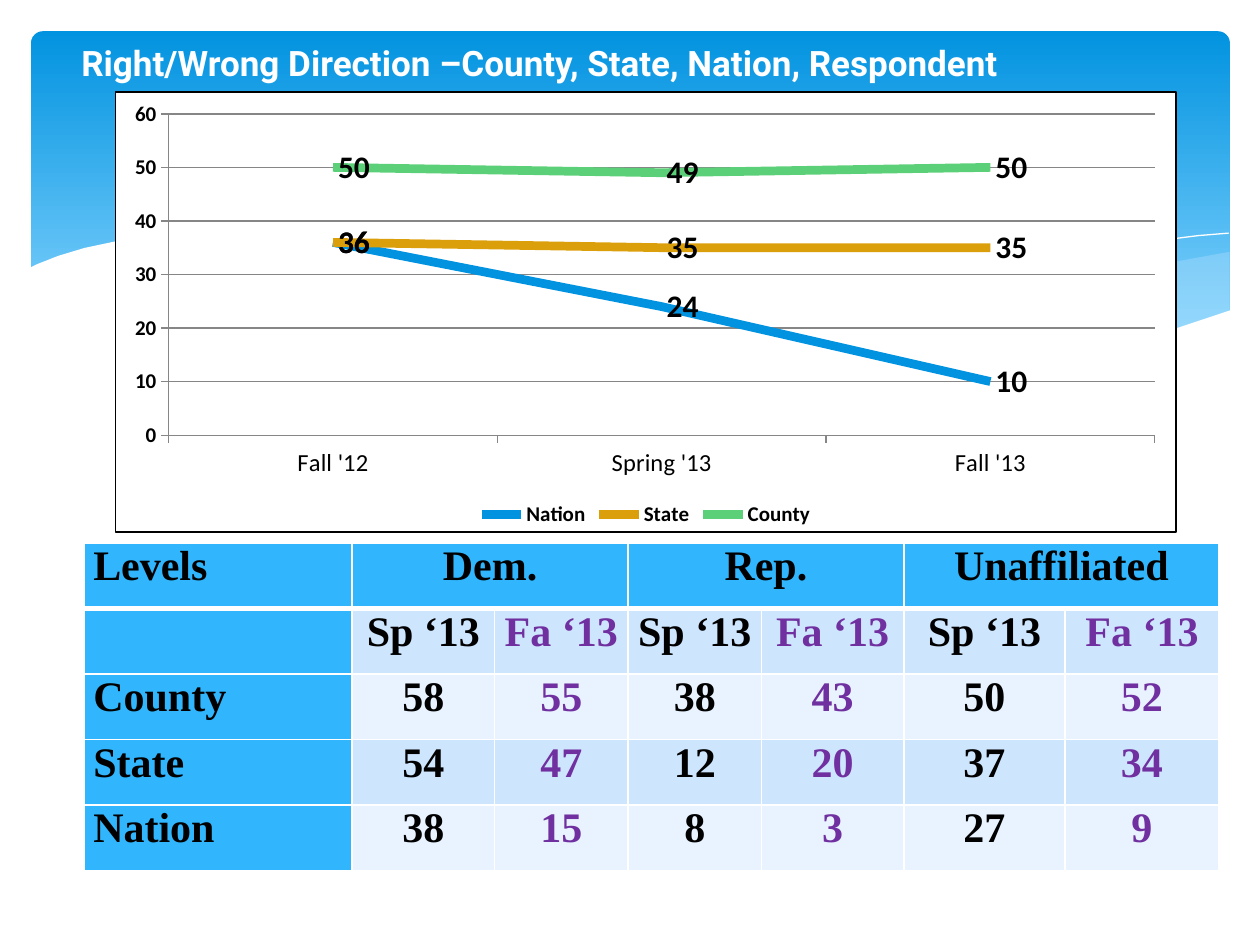
"""Build the right/wrong direction slide with its trend chart and party table."""
from lxml import etree
from pptx import Presentation
from pptx import util as u
from pptx.chart import data as cd
from pptx.dml.color import RGBColor
from pptx.enum import chart as ec, shapes, text
from pptx.oxml import parse_xml
from pptx.oxml.ns import nsdecls, qn

C = {"white": "FFFFFF", "black": "000000", "purple": "7030A0", "head": "31B6FD",
     "band": "CEE5FE", "light": "E8F3FF", "top": "0293E0", "sky": "83D3FE",
     "wave": "C6E7FC", "grid": "868686",
     "Nation": "0293E0", "State": "DC9F0C", "County": "5BD078"}


def rgb(name):
    return RGBColor.from_string(C[name])


def style(font, **values):
    font.color.rgb = rgb(values.pop("color", "black"))
    for key, value in values.items():
        setattr(font, key, value)


prs = Presentation()
prs.slide_width, prs.slide_height = u.Cm(25.4), u.Cm(19.05)
s = prs.slides.add_slide(prs.slide_layouts[6])

sp = s.shapes.add_shape(shapes.MSO_SHAPE.ROUNDED_RECTANGLE,
                        u.Cm(0.63), u.Cm(0.63), u.Cm(24.16), u.Cm(6.86))
sp.adjustments[0] = 0.034
sp.shadow.inherit = False
sp.line.fill.background()
sp.fill.gradient()
sp.fill.gradient_angle = 270
for stop, name, pos in zip(sp.fill.gradient_stops, ("top", "sky"), (0, 0.9)):
    stop.color.rgb, stop.position = rgb(name), pos

waves = [
    ("wave", 29, [(24.77, 5.08), (23.39, 5.33), (21.87, 5.66), (19.79, 6.15), (17.93, 6.53),
                  (16.79, 6.73), (18.26, 6.91), (19.84, 7.04), (21.21, 7.04), (22.38, 6.96),
                  (23.39, 6.73), (24.13, 6.53), (24.79, 6.27), (24.79, 5.08)]),
    ("wave", 40, [(22.68, 6.93), (21.26, 6.73), (18.82, 6.27), (15.98, 5.64), (13.74, 5.16),
                  (11.81, 4.85), (10.13, 4.72), (8.74, 4.72), (7.26, 4.85), (9.19, 5.16),
                  (11.4, 5.64), (13.46, 6.1), (15.7, 6.55), (17.65, 6.86), (19.63, 7.04),
                  (21.29, 7.06)]),
    (None, 100, [(7.85, 4.95), (8.97, 4.8), (10.57, 4.75), (12.42, 4.83), (14.12, 5),
                 (16.15, 5.28), (18.47, 5.74), (21.11, 6.38), (23.04, 6.91)]),
    (None, 100, [(15.57, 6.53), (17.07, 6.12), (19, 5.66), (21.23, 5.18), (22.73, 4.93),
                 (24.16, 4.75), (24.77, 4.7)]),
    ("white", 100, [(24.82, 6.25), (23.62, 6.65), (22.23, 6.93), (20.9, 7.04), (19.33, 6.99),
                    (17.48, 6.81), (15.32, 6.45), (13.44, 6.07), (11.35, 5.59), (9.27, 5.13),
                    (7.42, 4.83), (5.84, 4.7), (4.5, 4.67), (3.35, 4.72), (2.41, 4.85),
                    (1.7, 5), (1.17, 5.16), (0.74, 5.33), (0.58, 5.41), (0.58, 8.36),
                    (24.82, 8.36)]),
]
for fill, alpha, points in waves:
    pts = [(u.Cm(x), u.Cm(y)) for x, y in points]
    fb = s.shapes.build_freeform(*pts[0])
    fb.add_line_segments(pts[1:], close=fill is not None)
    sp = fb.convert_to_shape()
    sp.shadow.inherit = False
    if fill:
        sp.line.fill.background()
        sp.fill.solid()
        sp.fill.fore_color.rgb = rgb(fill)
        clr = sp.fill._xPr.find(qn("a:solidFill"))[0]
        etree.SubElement(clr, qn("a:alpha"), val=str(alpha * 1000))
    else:
        sp.fill.background()
        sp.line.color.rgb = rgb("white")
        sp.line.width = 0

tf = s.shapes.add_textbox(u.Cm(0.63), u.Cm(0.71), u.Cm(22.5), u.Cm(1.12)).text_frame
tf.word_wrap = True
tf.vertical_anchor = text.MSO_ANCHOR.MIDDLE
p = tf.paragraphs[0]
p._p.get_or_add_pPr().set("indent", str(u.Cm(0.76)))
r = p.add_run()
r.text = "Right/Wrong Direction –County, State, Nation, Respondent"
style(r.font, name="Roboto", size=u.Pt(20), bold=True, color="white")

rows = [["Levels", "Dem.", "", "Rep.", "", "Unaffiliated", ""],
        [""] + ["Sp ‘13", "Fa ‘13"] * 3,
        ["County", 58, 55, 38, 43, 50, 52],
        ["State", 54, 47, 12, 20, 37, 34],
        ["Nation", 38, 15, 8, 3, 27, 9]]
widths = [5.4, 2.87, 2.69, 2.69, 2.87, 3.25, 3.1]
tbl = s.shapes.add_table(len(rows), len(widths), u.Cm(1.7), u.Cm(10.95),
                         u.Cm(sum(widths)), u.Cm(6.6)).table
for col, width in zip(tbl.columns, widths):
    col.width = u.Cm(width)
for i, row in enumerate(rows):
    tbl.rows[i].height = u.Cm(1.32)
    for j, value in enumerate(row):
        cell = tbl.cell(i, j)
        cell.margin_left = cell.margin_right = u.Cm(0.18)
        cell.margin_top = cell.margin_bottom = 0
        for side in ("lnL", "lnR", "lnT", "lnB"):
            thick = (i, side) in ((0, "lnB"), (1, "lnT"))
            cell._tc.get_or_add_tcPr().append(parse_xml(
                f'<a:{side} {nsdecls("a")} w="{u.Pt(3 if thick else 1)}"><a:solidFill>'
                f'<a:srgbClr val="{C["white"]}"/></a:solidFill></a:{side}>'))
        cell.fill.solid()
        cell.fill.fore_color.rgb = rgb("head" if i == 0 or j == 0 else ("light", "band")[i % 2])
        if value == "":
            continue
        p = cell.text_frame.paragraphs[0]
        p.alignment = text.PP_ALIGN.CENTER if j else text.PP_ALIGN.LEFT
        r = p.add_run()
        r.text = str(value)
        style(r.font, name="Times New Roman", size=u.Pt(24), bold=True,
              color="purple" if i and j and j % 2 == 0 else "black")
for j in (1, 3, 5):
    tbl.cell(0, j).merge(tbl.cell(0, j + 1))

data = cd.CategoryChartData()
data.categories = ["Fall '12", "Spring '13", "Fall '13"]
for name, values in {"Nation": (36, 24, 10), "State": (36, 35, 35), "County": (50, 49, 50)}.items():
    data.add_series(name, values)
chart = s.shapes.add_chart(ec.XL_CHART_TYPE.LINE, u.Cm(2.32), u.Cm(1.84),
                           u.Cm(21.4), u.Cm(8.9), data).chart
chart.has_title = False
style(chart.font, name="Calibri", size=u.Pt(10))
chart.has_legend = True
chart.legend.position = ec.XL_LEGEND_POSITION.BOTTOM
chart.legend.include_in_layout = False
style(chart.legend.font, name="Calibri", size=u.Pt(12), bold=True)

cat, val = chart.category_axis, chart.value_axis
for axis, size, bold in ((cat, 14, False), (val, 12, True)):
    style(axis.tick_labels.font, name="Calibri", size=u.Pt(size), bold=bold)
    axis.major_tick_mark = ec.XL_TICK_MARK.OUTSIDE
    axis.format.line.color.rgb = rgb("grid")
for key, value in {"minimum_scale": 0, "maximum_scale": 60, "major_unit": 10,
                   "has_major_gridlines": True}.items():
    setattr(val, key, value)
val.major_gridlines.format.line.color.rgb = rgb("grid")

plot = chart.plots[0]
plot.vary_by_categories = False
for order, ser in zip((2, 1, 0), list(plot.series)):
    ser._element.find(qn("c:order")).set("val", str(order))
    ser.smooth = False
    ser.marker.style = ec.XL_MARKER_STYLE.NONE
    ser.format.line.color.rgb = rgb(ser.name)
    ser.format.line.width = u.Pt(5)
    labels = ser.data_labels
    labels.show_value = True
    labels.position = ec.XL_LABEL_POSITION.RIGHT
    style(labels.font, name="Calibri", size=u.Pt(18), bold=True)

area = chart._chartSpace.chart.plotArea
for old in area.findall(qn("c:layout")):
    area.remove(old)
box = "".join(f'<c:{k} val="{v}"/>' for k, v in (
    ("layoutTarget", "inner"), ("xMode", "edge"), ("yMode", "edge"),
    ("x", 0.05), ("y", 0.05), ("w", 0.93), ("h", 0.73)))
area.insert(0, parse_xml(
    f'<c:layout {nsdecls("c")}><c:manualLayout>{box}</c:manualLayout></c:layout>'))
chart._chartSpace.chart.addnext(parse_xml(
    f'<c:spPr {nsdecls("c", "a")}><a:solidFill><a:srgbClr val="{C["white"]}"/></a:solidFill>'
    f'<a:ln w="{u.Pt(0.75)}"><a:solidFill><a:srgbClr val="{C["black"]}"/></a:solidFill></a:ln>'
    '</c:spPr>'))

prs.save("out.pptx")
